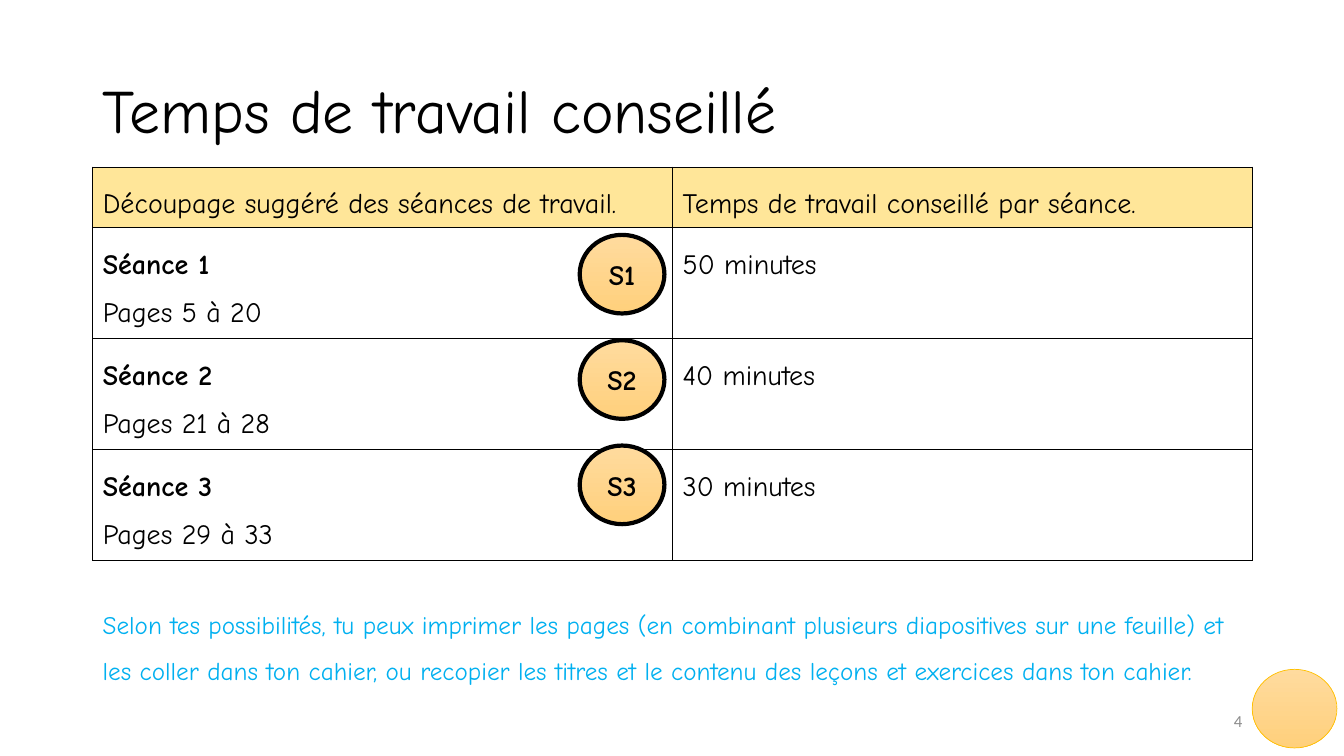
import dataclasses
import pptx
import pptx.dml.color
import pptx.enum.shapes
import pptx.enum.text
import pptx.oxml
import pptx.oxml.ns
import pptx.util

INCH = pptx.util.Inches
SHAPE = pptx.enum.shapes.MSO_SHAPE
ALIGN = pptx.enum.text.PP_ALIGN
ANCHOR = pptx.enum.text.MSO_ANCHOR


@dataclasses.dataclass(frozen=True)
class Theme:
    """Colours, fonts and type sizes of the slide."""
    ink: str = "000000"
    blue: str = "00B0F0"
    gray: str = "8C8C8C"
    head: str = "FFE699"
    gold: str = "FFC000"
    light: str = "FFDB9E"
    deep: str = "FFD07C"
    hand: str = "Comic Neue"
    plain: str = "Calibri"
    title: int = 44
    body: int = 20
    note: int = 18
    small: int = 12


THEME = Theme()
WIDE, HIGH = 13.33, 7.5
LEFT, SPAN = 0.92, 11.5
HEAD, ROW = 0.57, 1.06
BADGE, PITCH = (0.84, 0.78), 1.045
PLAN = [("Pages 5 à 20", "50 minutes"), ("Pages 21 à 28", "40 minutes"),
        ("Pages 29 à 33", "30 minutes")]


def tint(code):
    """Return the colour for a hex code."""
    return pptx.dml.color.RGBColor.from_string(code)


def write(frame, lines, size, color=THEME.ink, face=THEME.hand, bold=(),
          space=1.0, align=ALIGN.LEFT):
    """Fill a text frame; bold holds the indexes of the bold lines."""
    for i, line in enumerate(lines):
        para = frame.paragraphs[0] if i == 0 else frame.add_paragraph()
        para.text = line
        para.line_spacing = space
        para.alignment = align
        para.font.name = face
        para.font.size = pptx.util.Pt(size)
        para.font.color.rgb = tint(color)
        para.font.bold = i in bold


def label(slide, box, line, size, anchor=ANCHOR.MIDDLE, **style):
    """Place one wrapped text box."""
    frame = slide.shapes.add_textbox(*map(INCH, box)).text_frame
    frame.word_wrap = True
    frame.vertical_anchor = anchor
    write(frame, [line], size, **style)


def edge(cell):
    """Draw thin lines on the four sides of a cell."""
    props = cell._tc.get_or_add_tcPr()
    for i, side in enumerate(("lnL", "lnR", "lnT", "lnB")):
        props.insert(i, pptx.oxml.parse_xml(
            f'<a:{side} {pptx.oxml.ns.nsdecls("a")} w="12700"><a:solidFill>'
            f'<a:srgbClr val="{THEME.ink}"/></a:solidFill></a:{side}>'))


def grid(slide, box):
    """Build the table of sessions and times."""
    rows = [(["Découpage suggéré des séances de travail."],
             ["Temps de travail conseillé par séance."])]
    rows += [([f"Séance {i}", pages], [time])
             for i, (pages, time) in enumerate(PLAN, 1)]
    table = slide.shapes.add_table(len(rows), 2, *map(INCH, box)).table
    table.first_row = table.horz_banding = False
    for r, row in enumerate(rows):
        table.rows[r].height = INCH(ROW if r else HEAD)
        for c, lines in enumerate(row):
            cell = table.cell(r, c)
            if r:
                cell.fill.background()
            else:
                cell.fill.solid()
                cell.fill.fore_color.rgb = tint(THEME.head)
            write(cell.text_frame, lines, THEME.body, space=1.5,
                  bold=(0,) if len(lines) > 1 else ())
            edge(cell)


def badge(slide, left, top, color, width, text=""):
    """Draw a golden disc with an optional bold label."""
    disc = slide.shapes.add_shape(
        SHAPE.OVAL, *map(INCH, (left, top, *BADGE)))
    disc.shadow.inherit = False
    disc.fill.gradient()
    disc.fill.gradient_angle = 270
    for stop, code, place in zip(disc.fill.gradient_stops,
                                 (THEME.light, THEME.deep), (0, 1)):
        stop.color.rgb = tint(code)
        stop.position = place
    disc.line.color.rgb = tint(color)
    disc.line.width = pptx.util.Pt(width)
    if text:
        disc.text_frame.vertical_anchor = ANCHOR.MIDDLE
        write(disc.text_frame, [text], THEME.body, bold=(0,),
              align=ALIGN.CENTER)


def plan(slide, box):
    """Place the table and its column of session badges in a box."""
    left, top, width, _ = box
    grid(slide, box)
    for i in range(len(PLAN)):
        badge(slide, left + width / 2 - BADGE[0] - 0.08,
              top + 0.67 + i * PITCH, THEME.ink, 3, f"S{i + 1}")


def foot(slide, box):
    """Place the page number and the corner disc in a box."""
    left, top, width, high = box
    badge(slide, left + width, top - 0.31, THEME.gold, 0.5)
    label(slide, (left + width - 3, top, 3, high), "4", THEME.small,
          color=THEME.gray, face=THEME.plain, align=ALIGN.RIGHT)


def main():
    """Build and save the slide."""
    deck = pptx.Presentation()
    deck.slide_width, deck.slide_height = INCH(WIDE), INCH(HIGH)
    slide = deck.slides.add_slide(deck.slide_layouts[6])
    label(slide, (LEFT, 0.4, SPAN, 1.45), "Temps de travail conseillé",
          THEME.title, space=0.9)
    plan(slide, (LEFT, 1.66, SPAN, HEAD + ROW * len(PLAN)))
    label(slide, (LEFT, 5.85, SPAN, 1.41),
          "Selon tes possibilités, tu peux imprimer les pages (en combinant "
          "plusieurs diapositives sur une feuille) et les coller dans ton "
          "cahier, ou recopier les titres et le contenu des leçons et "
          "exercices dans ton cahier.", THEME.note, anchor=ANCHOR.TOP,
          color=THEME.blue, space=1.5)
    foot(slide, (LEFT, 6.95, SPAN, 0.4))
    deck.save("out.pptx")


if __name__ == "__main__":
    main()
